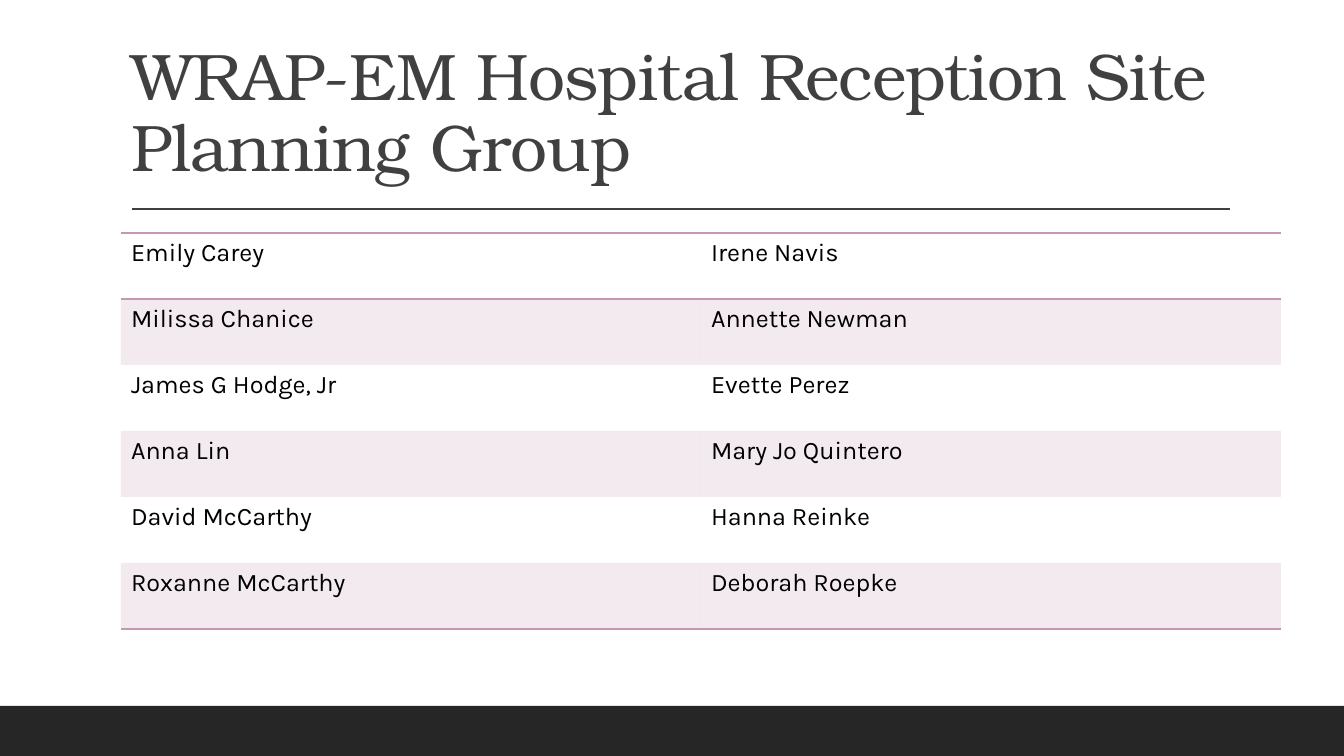
"""Build the planning group slide with its table of member names."""
from lxml.etree import SubElement
from pptx import Presentation
from pptx.dml.color import RGBColor
from pptx.enum.shapes import MSO_CONNECTOR, MSO_SHAPE
from pptx.enum.text import MSO_ANCHOR, PP_ALIGN
from pptx.oxml import parse_xml
from pptx.oxml.ns import nsdecls, qn
from pptx.util import Pt

TITLE = "WRAP-EM Hospital Reception Site Planning Group"
MEMBERS = [
    ("Emily Carey", "Irene Navis"),
    ("Milissa Chanice", "Annette Newman"),
    ("James G Hodge, Jr", "Evette Perez"),
    ("Anna Lin", "Mary Jo Quintero"),
    ("David McCarthy", "Hanna Reinke"),
    ("Roxanne McCarthy", "Deborah Roepke"),
]
COLORS = {"band": "262626", "title": "404040", "text": "000000", "accent": "C696B4"}
TITLE_FONT, BODY_FONT = "TeX Gyre Bonum", "Karla"
PLAIN_TABLE_STYLE = "{2D5ABB26-0587-4C30-8999-92F81FD0307C}"

SLIDE_WIDTH, SLIDE_HEIGHT = 1344, 756
BAND_TOP = 706
RULE_LEFT, RULE_RIGHT, RULE_TOP = 132, 1230, 209
TITLE_BOX = (121, 31, 1109, 160)
TABLE_LEFT, TABLE_TOP = 121, 233
COLUMN_WIDTH, ROW_HEIGHT = 580, 66


def px(length):
    return round(length * 12192000 / SLIDE_WIDTH)


def color(name):
    return RGBColor.from_string(COLORS[name])


def style_run(run, font_name, size, color_name):
    run.font.name = font_name
    run.font.size = Pt(size)
    run.font.color.rgb = color(color_name)


def add_band(slide):
    band = slide.shapes.add_shape(
        MSO_SHAPE.RECTANGLE, 0, px(BAND_TOP), px(SLIDE_WIDTH), px(SLIDE_HEIGHT - BAND_TOP))
    band.shadow.inherit = False
    band.fill.solid()
    band.fill.fore_color.rgb = color("band")
    band.line.fill.background()


def add_rule(slide):
    rule = slide.shapes.add_connector(
        MSO_CONNECTOR.STRAIGHT, px(RULE_LEFT), px(RULE_TOP), px(RULE_RIGHT), px(RULE_TOP))
    rule.line.color.rgb = color("title")
    rule.line.width = Pt(1)
    SubElement(rule._element.spPr, qn("a:effectLst"))


def format_title(title):
    title.left, title.top, title.width, title.height = map(px, TITLE_BOX)
    frame = title.text_frame
    frame.text = TITLE
    frame.word_wrap = True
    frame.vertical_anchor = MSO_ANCHOR.BOTTOM
    paragraph = frame.paragraphs[0]
    paragraph.alignment = PP_ALIGN.LEFT
    paragraph.line_spacing = 0.9
    run = paragraph.runs[0]
    style_run(run, TITLE_FONT, 47, "title")
    run.font._element.set("spc", "-50")


def format_cell(cell, name, shaded, borders):
    cell.text = name
    style_run(cell.text_frame.paragraphs[0].runs[0], BODY_FONT, 18, "text")
    if shaded:
        cell.fill.solid()
        cell.fill.fore_color.rgb = color("accent")
    else:
        cell.fill.background()
    properties = cell._tc.get_or_add_tcPr()
    for shade in properties.iter(qn("a:srgbClr")):
        SubElement(shade, qn("a:alpha"), val="20000")
    for position, side in enumerate(borders):
        properties.insert(position, parse_xml(
            f'<a:{side} {nsdecls("a")} w="12700"><a:solidFill>'
            f'<a:srgbClr val="{COLORS["accent"]}"/></a:solidFill></a:{side}>'))


def add_members(slide):
    row_count, column_count = len(MEMBERS), len(MEMBERS[0])
    frame = slide.shapes.add_table(
        row_count, column_count, px(TABLE_LEFT), px(TABLE_TOP),
        px(COLUMN_WIDTH * column_count), px(ROW_HEIGHT * row_count))
    table = frame.table
    table.first_row = table.horz_banding = False
    table._tbl.tblPr.find(qn("a:tableStyleId")).text = PLAIN_TABLE_STYLE
    borders = {0: ("lnT", "lnB"), row_count - 1: ("lnB",)}
    for row, names in enumerate(MEMBERS):
        for column, name in enumerate(names):
            format_cell(table.cell(row, column), name, row % 2 == 1, borders.get(row, ()))


def main():
    presentation = Presentation()
    presentation.slide_width = px(SLIDE_WIDTH)
    presentation.slide_height = px(SLIDE_HEIGHT)
    slide = presentation.slides.add_slide(presentation.slide_layouts[5])
    add_band(slide)
    add_rule(slide)
    format_title(slide.shapes.title)
    add_members(slide)
    presentation.save("out.pptx")


if __name__ == "__main__":
    main()
